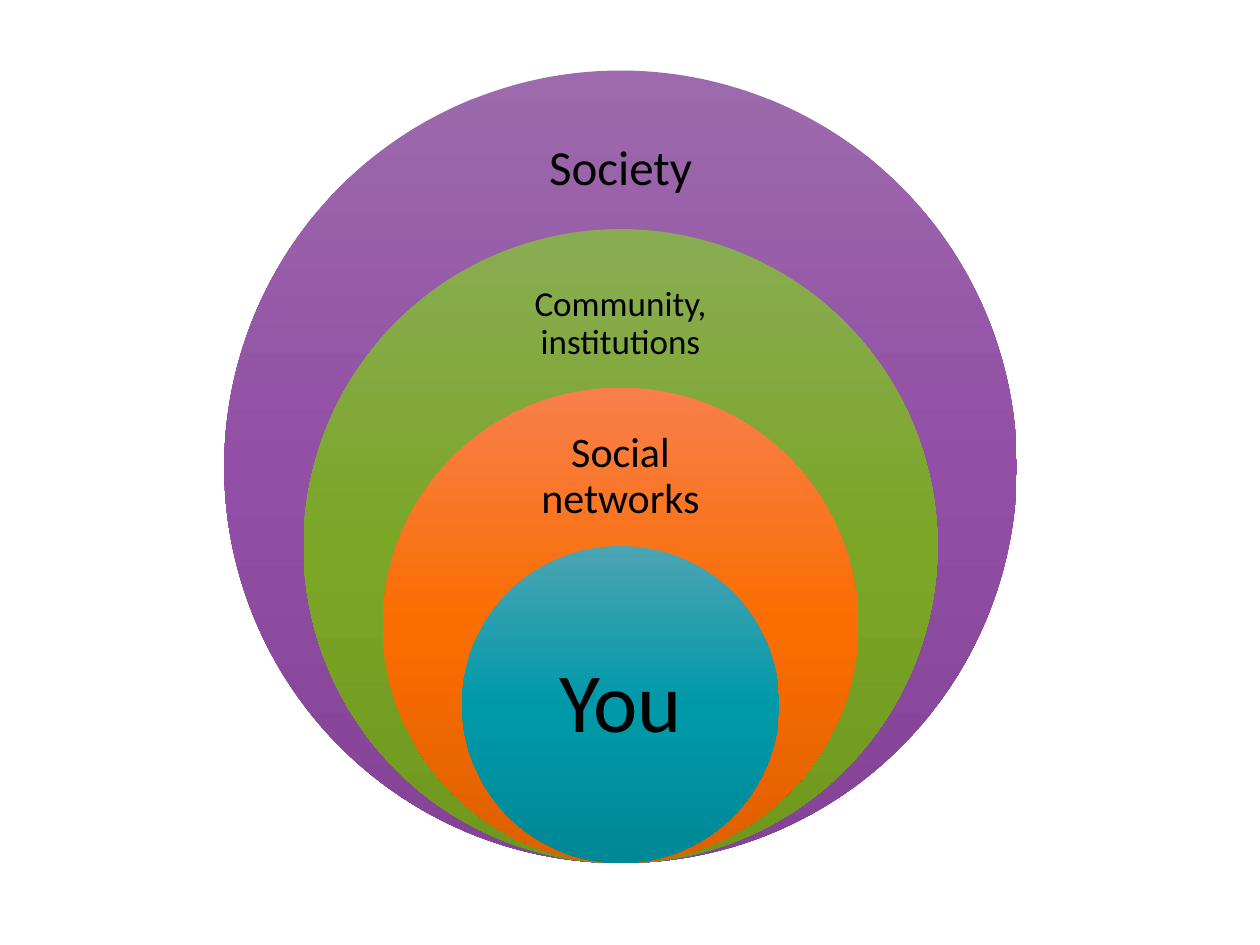
from copy import deepcopy

from pptx import Presentation
from pptx.dml.color import RGBColor
from pptx.enum.shapes import MSO_SHAPE as Shape
from pptx.enum.text import MSO_ANCHOR as Anchor, PP_ALIGN as Align
from pptx.oxml.ns import qn
from pptx.util import Inches, Pt

COLORS = {
    "text": "000000",
    "society": ("9D6AAD", "924FA5", "844396"),
    "community": ("89AC53", "7BA626", "6F981D"),
    "networks": ("F87F4B", "FA6D00", "DE6000"),
    "you": ("4BA4B3", "0099A9", "008896"),
}
CENTER = 4.925
BOTTOM = 6.85
DIAMETER = 6.29
RINGS = [
    ("society", "Society", 28, 0.22, 0.88, 1.76, 0.94),
    ("community", "Community, institutions", 20, 0.16, 2.12, 1.76, 0.91),
    ("networks", "Social networks", 24, 0.19, 3.36, 1.76, 0.85),
    ("you", "You", 48, 0.37, 4.97, 1.78, 1.26),
]

deck = Presentation()
deck.slide_width = Inches(10)
deck.slide_height = Inches(7.5)
page = deck.slides.add_slide(deck.slide_layouts[6])

for index, (name, label, size, inset, top, width, height) in enumerate(RINGS):
    diameter = DIAMETER * (1 - index / 5)
    circle = page.shapes.add_shape(
        Shape.OVAL,
        Inches(CENTER - diameter / 2),
        Inches(BOTTOM - diameter),
        Inches(diameter),
        Inches(diameter),
    )
    circle.shadow.inherit = False
    circle.line.fill.background()
    circle.fill.gradient()
    circle.fill.gradient_angle = 270
    first_stop = next(circle._element.spPr.iter(qn("a:gs")))
    first_stop.addnext(deepcopy(first_stop))
    for step, stop in enumerate(circle.fill.gradient_stops):
        stop.position = step / 2
        stop.color.rgb = RGBColor.from_string(COLORS[name][step])

    box = page.shapes.add_textbox(
        Inches(CENTER - width / 2), Inches(top), Inches(width), Inches(height)
    )
    frame = box.text_frame
    frame.word_wrap = True
    frame.vertical_anchor = Anchor.MIDDLE
    for side in ("left", "top", "right", "bottom"):
        setattr(frame, f"margin_{side}", Inches(inset))
    para = frame.paragraphs[0]
    para.alignment = Align.CENTER
    para.line_spacing = 0.9
    span = para.add_run()
    span.text = label
    for key, value in {"name": "Calibri", "size": Pt(size)}.items():
        setattr(span.font, key, value)
    span.font.color.rgb = RGBColor.from_string(COLORS["text"])

deck.save("out.pptx")
